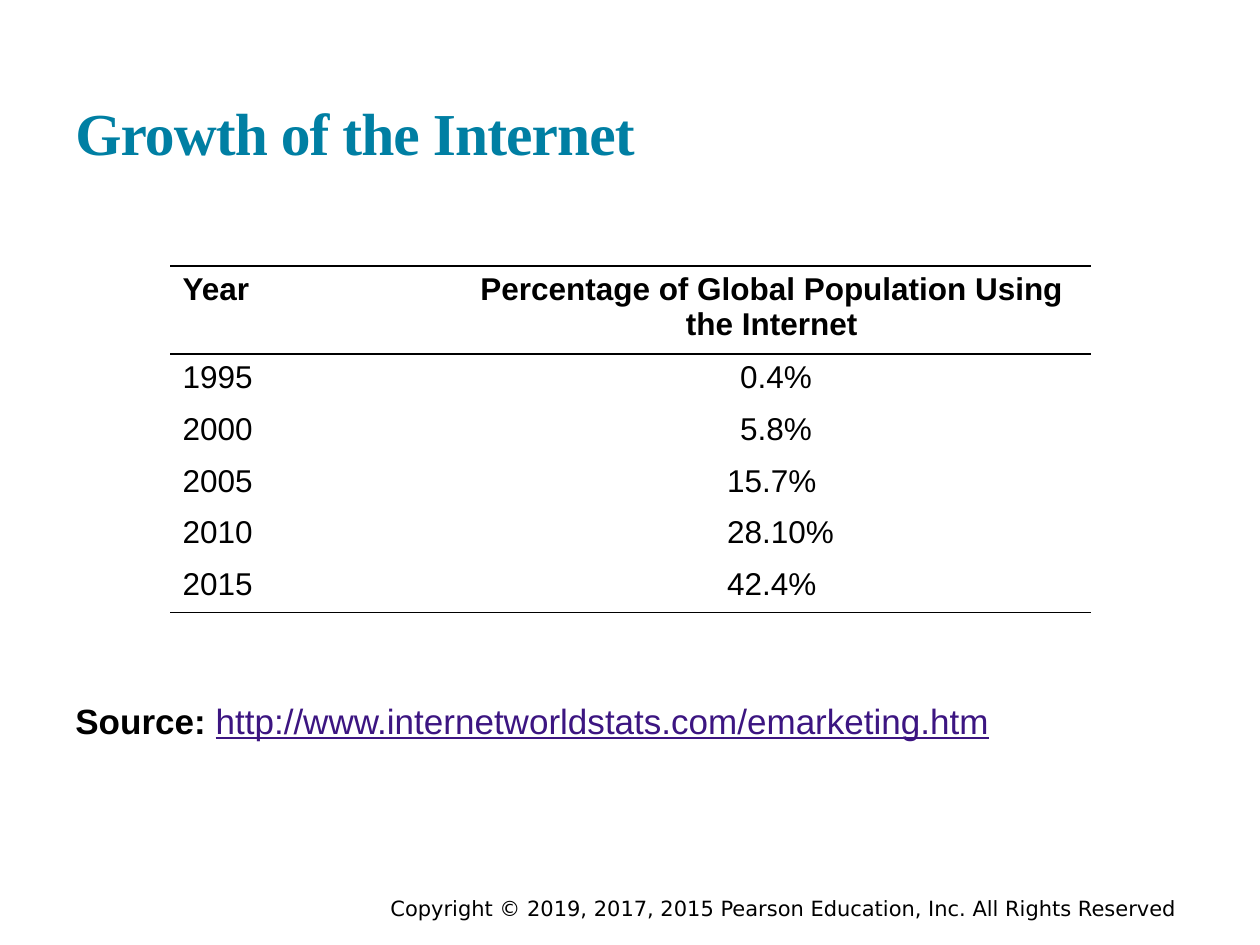
from lxml.etree import SubElement
from pptx import Presentation
from pptx.dml.color import RGBColor
from pptx.enum.text import MSO_ANCHOR, PP_ALIGN
from pptx.oxml.ns import qn
from pptx.util import Inches, Pt

BLACK = RGBColor(0x00, 0x00, 0x00)
TEAL = RGBColor(0x00, 0x7F, 0xA3)
PURPLE = RGBColor(0x3C, 0x15, 0x81)

ROWS = [
    ("Year", "Percentage of Global Population Using the Internet", 0),
    ("1995", "0.4%", 0.07),
    ("2000", "5.8%", 0.07),
    ("2005", "15.7%", 0),
    ("2010", "28.10%", 0.14),
    ("2015", "42.4%", 0),
]


class Deck:
    """Holds the style and the current slide."""

    def __init__(self):
        self.font = "Arial"
        self.prs = Presentation()
        self.prs.slide_width = Inches(10)
        self.prs.slide_height = Inches(7.5)
        self.slide = self.prs.slides.add_slide(self.prs.slide_layouts[6])

    def run(self, para, text, size, color=BLACK, bold=False, line=False, face=None, track=0):
        run = para.add_run()
        run.text = text
        font = run.font
        font.name = face or self.font
        font.size = Pt(size)
        font.bold = bold
        font.color.rgb = color
        if line:
            font.underline = True
        if track:
            run._r.get_or_add_rPr().set("spc", str(int(track * 100)))

    def text(self, x, y, w, h, anchor=MSO_ANCHOR.TOP, pad=0.1):
        frame = self.slide.shapes.add_textbox(
            Inches(x), Inches(y), Inches(w), Inches(h)).text_frame
        frame.word_wrap = True
        frame.vertical_anchor = anchor
        frame.margin_top = frame.margin_bottom = Inches(pad)
        return frame.paragraphs[0]

    def edges(self, cell, ruled):
        props = cell._tc.get_or_add_tcPr()
        for side in ("L", "R", "T", "B"):
            edge = SubElement(props, qn("a:ln" + side), w=str(Pt(1)))
            if side in ruled:
                fill = SubElement(edge, qn("a:solidFill"))
                SubElement(fill, qn("a:srgbClr"), val=str(BLACK))
            else:
                SubElement(edge, qn("a:noFill"))
        cell.fill.background()

    def table(self, x, y, widths, heights, rows):
        grid = self.slide.shapes.add_table(
            len(rows), len(widths), Inches(x), Inches(y),
            Inches(sum(widths)), Inches(sum(heights))).table
        grid.first_row = grid.horz_banding = False
        for col, width in zip(grid.columns, widths):
            col.width = Inches(width)
        for row, height in zip(grid.rows, heights):
            row.height = Inches(height)
        ruled = {0: "TB", 1: "T", len(rows) - 1: "B"}
        for i, (year, share, shift) in enumerate(rows):
            for j, text in enumerate((year, share)):
                cell = grid.cell(i, j)
                self.edges(cell, ruled.get(i, ""))
                para = cell.text_frame.paragraphs[0]
                if j:
                    para.alignment = PP_ALIGN.CENTER
                    if shift:
                        para._p.get_or_add_pPr().set("marL", str(Inches(shift)))
                self.run(para, text, 18, bold=i == 0)

    def save(self):
        self.prs.save("out.pptx")


def main():
    deck = Deck()
    foot = deck.text(3, 7.08, 6.65, 0.25, MSO_ANCHOR.MIDDLE, 0.05)
    deck.run(foot, "Copyright © 2019, 2017, 2015 Pearson Education, Inc. All Rights Reserved",
             12, face="DejaVu Sans")
    title = deck.text(0.5, 0.66, 9, 0.77, MSO_ANCHOR.BOTTOM)
    deck.run(title, "Growth of the Internet", 34, TEAL, True,
             face="Times New Roman", track=-0.5)
    source = deck.text(0.5, 5.45, 9, 0.54)
    deck.run(source, "Source: ", 20, bold=True)
    deck.run(source, "http://www.internetworldstats.com/emarketing.htm", 20, PURPLE, line=True)
    deck.table(1.35, 2.11, [2.24, 5.07], [0.7] + [0.41] * 5, ROWS)
    deck.save()


if __name__ == "__main__":
    main()
